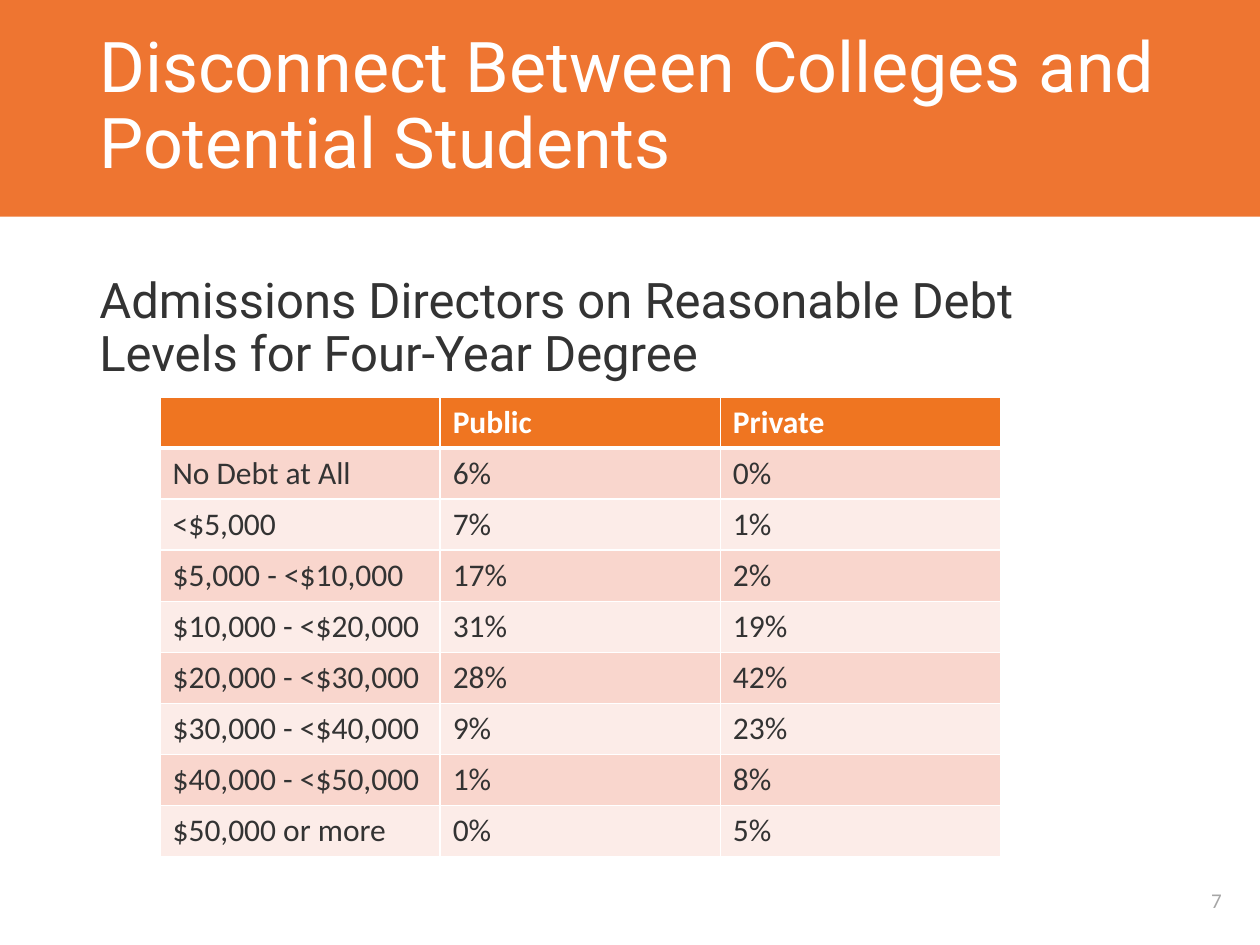
from lxml import etree
from pptx import Presentation
from pptx.dml.color import RGBColor
from pptx.enum.shapes import MSO_SHAPE
from pptx.enum.text import MSO_ANCHOR, PP_ALIGN
from pptx.oxml.ns import qn
from pptx.util import Inches, Pt


def rgb(value):
    return RGBColor.from_string(value)


def add_text(tf, text, size, font, color, bold=False):
    p = tf.paragraphs[0]
    r = p.add_run()
    r.text = text
    r.font.size = Pt(size)
    r.font.name = font
    r.font.bold = bold
    r.font.color.rgb = rgb(color)
    return p


prs = Presentation()
prs.slide_width, prs.slide_height = Inches(10), Inches(7.5)
s = prs.slides.add_slide(prs.slide_layouts[6])

# Title band
sp = s.shapes.add_shape(MSO_SHAPE.RECTANGLE, Inches(-0.01), 0, Inches(10.02), Inches(1.72))
sp.shadow.inherit = False
sp.fill.solid()
sp.fill.fore_color.rgb = rgb("EE7531")
sp.line.fill.background()

# Title, subtitle and page number
texts = [
    ("Disconnect Between Colleges and Potential Students",
     (0.69, 0, 8.62, 1.71), 40, "Roboto", "FFFFFF", MSO_ANCHOR.MIDDLE, PP_ALIGN.LEFT, 0.9),
    ("Admissions Directors on Reasonable Debt Levels for Four-Year Degree",
     (0.69, 2.14, 8.62, 4.47), 28, "Roboto", "333333", MSO_ANCHOR.TOP, PP_ALIGN.LEFT, 0.9),
    ("7", (9.31, 6.95, 0.69, 0.39), 12, "Calibri", "A6A6A6",
     MSO_ANCHOR.MIDDLE, PP_ALIGN.CENTER, 1.0),
]
for text, box, size, font, color, anchor, align, spacing in texts:
    tf = s.shapes.add_textbox(*[Inches(v) for v in box]).text_frame
    tf.word_wrap = True
    tf.vertical_anchor = anchor
    p = add_text(tf, text, size, font, color)
    p.alignment = align
    p.line_spacing = spacing

# Debt level table
rows = [
    ("", "Public", "Private"),
    ("No Debt at All", "6%", "0%"),
    ("<$5,000", "7%", "1%"),
    ("$5,000 - <$10,000", "17%", "2%"),
    ("$10,000 - <$20,000", "31%", "19%"),
    ("$20,000 - <$30,000", "28%", "42%"),
    ("$30,000 - <$40,000", "9%", "23%"),
    ("$40,000 - <$50,000", "1%", "8%"),
    ("$50,000 or more", "0%", "5%"),
]
table = s.shapes.add_table(len(rows), 3, Inches(1.27), Inches(3.15),
                           Inches(6.67), Inches(3.65)).table
for i, row in enumerate(rows):
    header = i == 0
    fill = "EF7521" if header else ("FCECE8", "F9D6CD")[i % 2]
    for j, text in enumerate(row):
        cell = table.cell(i, j)
        if text:
            add_text(cell.text_frame, text, 18, "Calibri",
                     "FFFFFF" if header else "333333", header)
        # White borders, thicker under the header, go before the fill
        tcPr = cell._tc.get_or_add_tcPr()
        for side in "LRTB":
            thick = (i, side) in ((0, "B"), (1, "T"))
            ln = etree.SubElement(tcPr, qn(f"a:ln{side}"), w=str(Pt(3 if thick else 1)))
            solid = etree.SubElement(ln, qn("a:solidFill"))
            etree.SubElement(solid, qn("a:srgbClr"), val="FFFFFF")
        cell.fill.solid()
        cell.fill.fore_color.rgb = rgb(fill)

prs.save("out.pptx")
